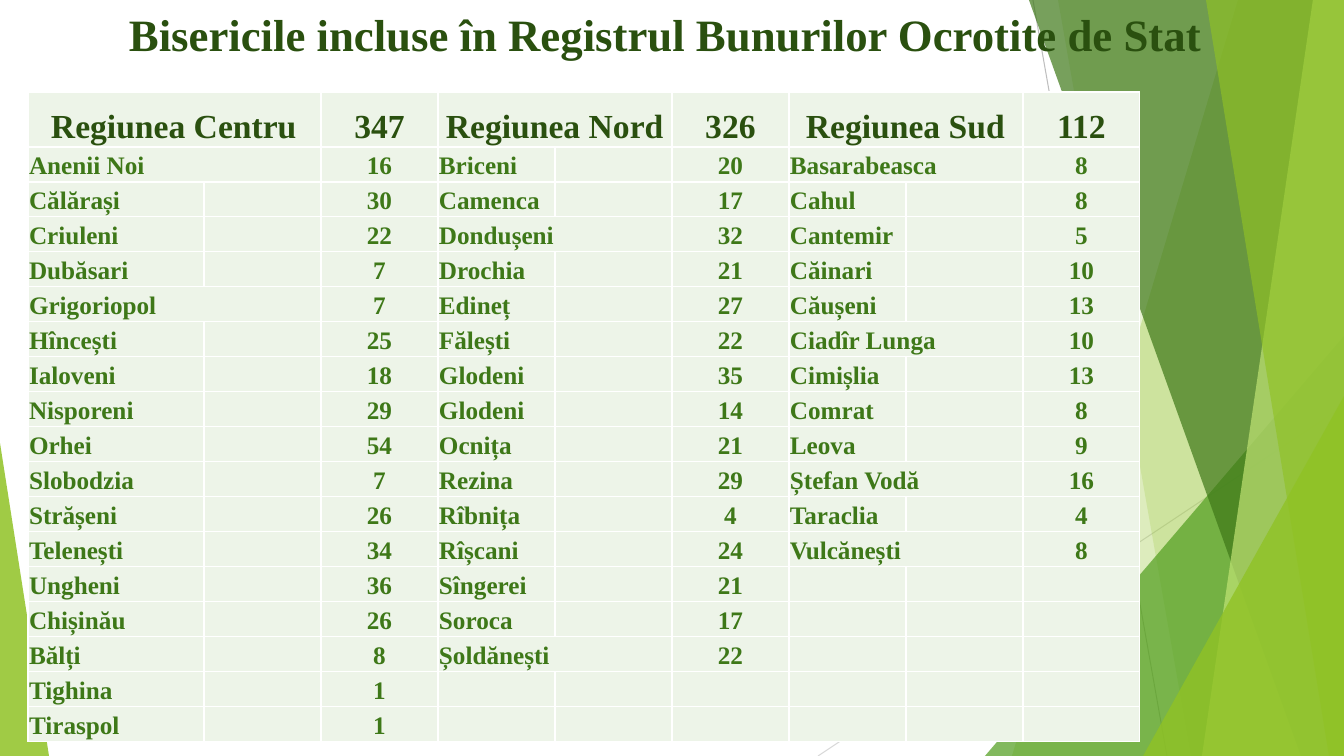
from lxml import etree
from pptx import Presentation
from pptx import util as u
from pptx.dml.color import RGBColor
from pptx.enum import shapes, text
from pptx.oxml import ns

PX = 914400 / 100.8
FONT = "Times New Roman"
COLOURS = {
    "white": "FFFFFF", "cell": "EDF4E8", "heading": "2A500F", "body": "3E7818",
    "lime": "90C225", "leaf": "539F20", "forest": "3E7818", "pale": "C0E374",
    "grey": "BEBEBE", "light grey": "D9D9D9",
}


def px(length):
    return u.Emu(round(length * PX))


def style(para, size, colour):
    para.font.name = FONT
    para.font.size = u.Pt(size)
    para.font.bold = True
    para.font.color.rgb = RGBColor.from_string(COLOURS[colour])


deck = Presentation()
deck.slide_width, deck.slide_height = px(1344), px(756)
page = deck.slides.add_slide(deck.slide_layouts[5])

# Thin diagonal lines
for x1, y1, x2, y2, colour in [
    (1033, 0, 1167, 756, "grey"),
    (1344, 406, 818, 756, "light grey"),
]:
    line = page.shapes.add_connector(
        shapes.MSO_CONNECTOR.STRAIGHT, px(x1), px(y1), px(x2), px(y2))
    line.line.color.rgb = RGBColor.from_string(COLOURS[colour])
    line.line.width = u.Pt(0.75)
    etree.SubElement(line.element.spPr, ns.qn("a:effectLst"))

# Translucent green facets: colour, opacity in percent, corners
facets = [
    ("lime", 30, [(1344, 0), (1238, 0), (1012, 756), (1344, 756)]),
    ("lime", 20, [(1344, 0), (1058, 0), (1191, 756), (1344, 756)]),
    ("leaf", 72, [(1344, 336), (985, 756), (1344, 756)]),
    ("forest", 70, [(1344, 0), (1029, 0), (1301, 756), (1344, 756)]),
    ("pale", 70, [(1344, 0), (1313, 0), (1202, 756), (1344, 756)]),
    ("lime", 65, [(1344, 0), (1206, 0), (1329, 756), (1344, 756)]),
    ("lime", 80, [(1344, 396), (1143, 756), (1344, 756)]),
    ("lime", 85, [(0, 443), (0, 756), (49, 756)]),
]
for colour, opacity, corners in facets:
    outline = page.shapes.build_freeform(*corners[0], scale=PX)
    outline.add_line_segments(corners[1:], close=True)
    facet = outline.convert_to_shape()
    facet.shadow.inherit = False
    facet.line.fill.background()
    facet.fill.solid()
    facet.fill.fore_color.rgb = RGBColor.from_string(COLOURS[colour])
    tint = facet.element.spPr.find(".//" + ns.qn("a:srgbClr"))
    etree.SubElement(tint, ns.qn("a:alpha"), val=str(opacity * 1000))

# Title, brought in front of the facets
title = page.shapes.title
title.element.getparent().append(title.element)
title.left, title.top, title.width, title.height = px(128), px(6), px(1076), px(56)
frame = title.text_frame
frame.text = "Bisericile incluse în Registrul Bunurilor Ocrotite de Stat"
frame.margin_left = frame.margin_top = px(1)
frame.margin_right = frame.margin_bottom = 0
frame.vertical_anchor = text.MSO_ANCHOR.TOP
frame.word_wrap = False
frame.auto_size = text.MSO_AUTO_SIZE.SHAPE_TO_FIT_TEXT
para = frame.paragraphs[0]
para.alignment = text.PP_ALIGN.LEFT
para.space_before = u.Pt(1)
style(para, 32, "heading")

# Regions: each has a heading, its total, its heading indent and its districts
regions = [
    ("Regiunea Centru", 347, 23, [
        ("Anenii Noi", 16), ("Călărași", 30), ("Criuleni", 22), ("Dubăsari", 7),
        ("Grigoriopol", 7), ("Hîncești", 25), ("Ialoveni", 18), ("Nisporeni", 29),
        ("Orhei", 54), ("Slobodzia", 7), ("Strășeni", 26), ("Telenești", 34),
        ("Ungheni", 36), ("Chișinău", 26), ("Bălți", 8), ("Tighina", 1),
        ("Tiraspol", 1)]),
    ("Regiunea Nord", 326, 8, [
        ("Briceni", 20), ("Camenca", 17), ("Dondușeni", 32), ("Drochia", 21),
        ("Edineț", 27), ("Fălești", 22), ("Glodeni", 35), ("Glodeni", 14),
        ("Ocnița", 21), ("Rezina", 29), ("Rîbnița", 4), ("Rîșcani", 24),
        ("Sîngerei", 21), ("Soroca", 17), ("Șoldănești", 22)]),
    ("Regiunea Sud", 112, 17, [
        ("Basarabeasca", 8), ("Cahul", 8), ("Cantemir", 5), ("Căinari", 10),
        ("Căușeni", 13), ("Ciadîr Lunga", 10), ("Cimișlia", 13), ("Comrat", 8),
        ("Leova", 9), ("Ștefan Vodă", 16), ("Taraclia", 4), ("Vulcănești", 8)]),
]
wide_names = {"Anenii Noi", "Grigoriopol", "Dondușeni", "Șoldănești",
              "Basarabeasca", "Ciadîr Lunga", "Ștefan Vodă", "Vulcănești"}

# Table grid
table = page.shapes.add_table(18, 9, px(28), px(92), px(1112), px(650)).table
table.first_row = table.horz_banding = False
for index, column in enumerate(table.columns):
    column.width = px(117 if index else 176)
for index, row in enumerate(table.rows):
    row.height = px(35 if index else 55)

# District names and counts
for group, (heading, total, indent, districts) in enumerate(regions):
    left = group * 3
    for row, (name, count) in enumerate([(heading, total)] + districts):
        name_cell = table.cell(row, left)
        name_cell.text = name
        table.cell(row, left + 2).text = str(count)
        if row == 0 or name in wide_names:
            name_cell.merge(table.cell(row, left + 1))

# Cell format
for row in range(18):
    for column in range(9):
        cell = table.cell(row, column)
        is_name = column % 3 == 0
        heading_indent = regions[column // 3][2]
        cell.margin_left = px((1 if row else heading_indent) if is_name else 0)
        cell.margin_top = px(4 if row else 14)
        cell.margin_right = cell.margin_bottom = 0
        borders = cell._tc.get_or_add_tcPr()
        for side in ("lnL", "lnR", "lnT", "lnB"):
            border = etree.SubElement(borders, ns.qn("a:" + side), w=str(u.Pt(1)))
            fill = etree.SubElement(border, ns.qn("a:solidFill"))
            etree.SubElement(fill, ns.qn("a:srgbClr"), val=COLOURS["white"])
        cell.fill.solid()
        cell.fill.fore_color.rgb = RGBColor.from_string(COLOURS["cell"])
        para = cell.text_frame.paragraphs[0]
        para.alignment = text.PP_ALIGN.LEFT if is_name else text.PP_ALIGN.CENTER
        para.line_spacing = u.Pt(21 if row else 28.4)
        para.space_before = u.Pt(3 if row else 10.3)
        style(para, 18 if row else 24, "body" if row else "heading")

deck.save("out.pptx")
